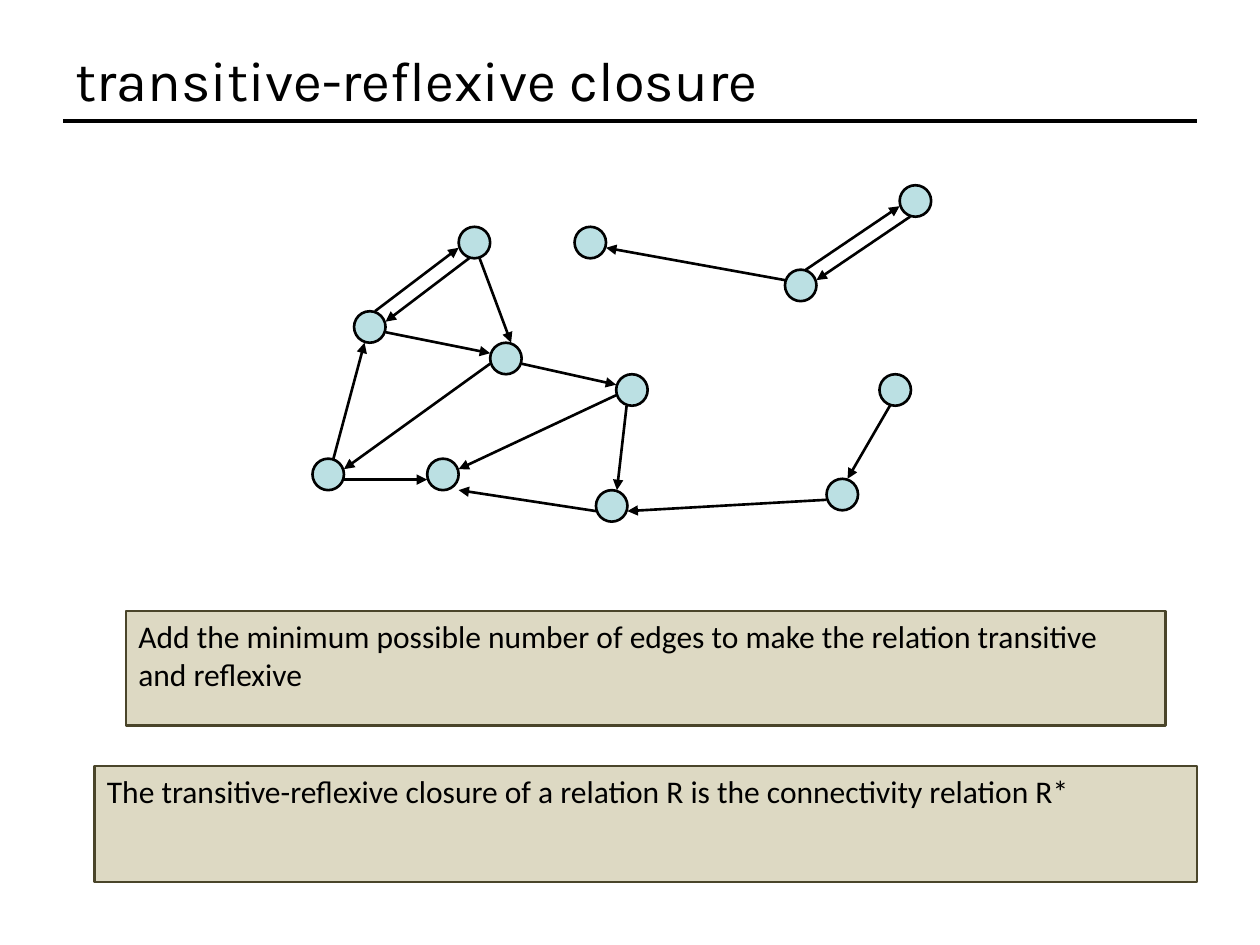
"""Build the transitive-reflexive closure slide: a directed graph and two notes."""
from lxml import etree
from pptx import Presentation
from pptx.dml.color import RGBColor
from pptx.enum.shapes import MSO_CONNECTOR, MSO_SHAPE
from pptx.enum.text import MSO_ANCHOR, PP_ALIGN
from pptx.oxml.ns import qn
from pptx.util import Inches, Pt

STRAIGHT = MSO_CONNECTOR.STRAIGHT
OVAL, RECT = MSO_SHAPE.OVAL, MSO_SHAPE.RECTANGLE
TOP, MIDDLE, LEFT = MSO_ANCHOR.TOP, MSO_ANCHOR.MIDDLE, PP_ALIGN.LEFT

COLORS = {"ink": "000000", "node": "BBE0E3", "note": "DDD9C3", "note_line": "4A452A"}
TITLE = "transitive-reflexive closure"
TITLE_BOX = (0.5, 0.3, 9, 0.66)
RULE = ((0.5, 0.96), (9.5, 0.96))
NODE_SIZE = 0.25
NODES = {
    "A": (2.81, 2.47), "B": (4.89, 2.97), "C": (2.48, 3.64), "D": (6.23, 2.14),
    "E": (3.89, 2.72), "F": (3.39, 3.64), "G": (4.73, 3.89), "H": (4.56, 1.8),
    "I": (7.14, 1.47), "J": (6.98, 2.97), "K": (3.64, 1.8), "L": (6.56, 3.8),
}
EDGES_IN_THIRDS = [
    ("E", (0, 2), "C", (3, 1)), ("C", (3, 2), "F", (0, 2)),
    ("C", (2, 0), "A", (1, 3)), ("A", (2, 0), "K", (0, 2)),
    ("A", (3, 2), "E", (0, 1)), ("K", (2, 3), "E", (2, 0)),
    ("E", (3, 2), "B", (0, 1)), ("B", (0, 2), "F", (3, 1)),
    ("G", (0, 2), "F", (3, 3)), ("B", (1, 3), "G", (2, 0)),
    ("L", (0, 2), "G", (3, 2)), ("J", (1, 3), "L", (2, 0)),
    ("D", (0, 1), "H", (3, 2)), ("I", (1, 3), "D", (3, 1)),
    ("D", (2, 0), "I", (0, 2)), ("K", (1, 3), "A", (3, 1)),
]
NOTES = [
    ("Add the minimum possible number of edges to make the relation transitive and reflexive",
     (1, 4.85, 8.25, 0.91)),
    ("The transitive-reflexive closure of a relation R is the connectivity relation R*",
     (0.75, 6.08, 8.75, 0.92)),
]


def rgb(name):
    return RGBColor.from_string(COLORS[name])


def set_text(sp, text, font, size, anchor):
    tf = sp.text_frame
    for name, value in {"word_wrap": True, "vertical_anchor": anchor}.items():
        setattr(tf, name, value)
    p = tf.paragraphs[0]
    p.alignment = LEFT
    r = p.add_run()
    r.text = text
    for name, value in {"name": font, "size": Pt(size)}.items():
        setattr(r.font, name, value)
    r.font.color.rgb = rgb("ink")


def add_box(s, kind, box, fill, line):
    sp = s.shapes.add_shape(kind, *map(Inches, box))
    sp.shadow.inherit = False
    sp.fill.solid()
    sp.fill.fore_color.rgb = rgb(fill)
    sp.line.color.rgb = rgb(line)
    sp.line.width = Pt(1.5)
    return sp


def add_line(s, start, end, width, arrow=False):
    cx = s.shapes.add_connector(STRAIGHT, *map(Inches, start + end))
    cx.line.color.rgb = rgb("ink")
    cx.line.width = Pt(width)
    sp_pr = cx._element.spPr
    if arrow:
        etree.SubElement(sp_pr.find(qn("a:ln")), qn("a:tailEnd"), type="triangle")
    etree.SubElement(sp_pr, qn("a:effectLst"))


def node_point(node, thirds):
    return tuple(at + n * NODE_SIZE / 3 for at, n in zip(NODES[node], thirds))


def main():
    prs = Presentation()
    prs.slide_width, prs.slide_height = Inches(10), Inches(7.5)
    s = prs.slides.add_slide(prs.slide_layouts[5])
    add_line(s, *RULE, 2)

    title = s.shapes.title
    for name, value in zip(("left", "top", "width", "height"), TITLE_BOX):
        setattr(title, name, Inches(value))
    set_text(title, TITLE, "Karla", 32, MIDDLE)

    for at in NODES.values():
        add_box(s, OVAL, at + (NODE_SIZE, NODE_SIZE), "node", "ink")
    for source, leave, target, enter in EDGES_IN_THIRDS:
        add_line(s, node_point(source, leave), node_point(target, enter), 1.5, arrow=True)
    for text, box in NOTES:
        set_text(add_box(s, RECT, box, "note", "note_line"), text, "Calibri", 18, TOP)

    prs.save("out.pptx")


if __name__ == "__main__":
    main()
